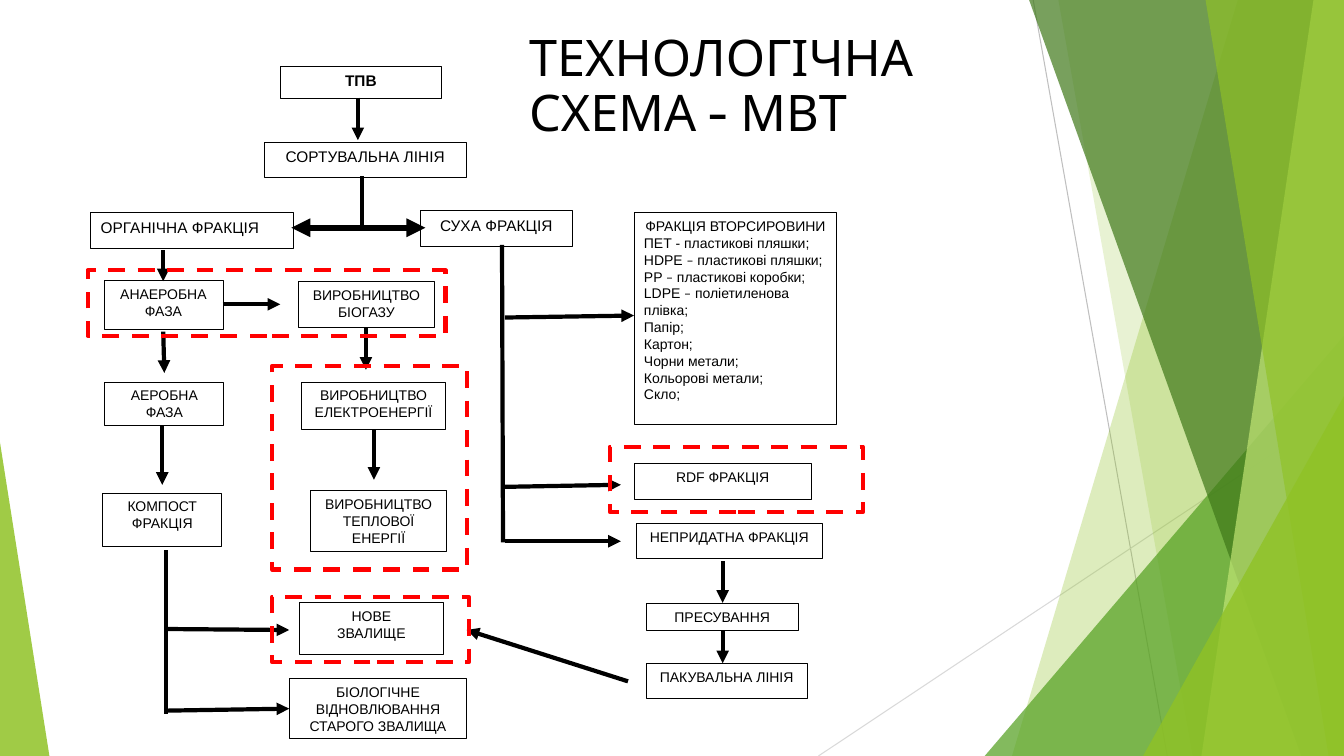
from pptx import Presentation
from pptx.dml.color import RGBColor
from pptx.enum.dml import MSO_LINE
from pptx.enum.shapes import MSO_CONNECTOR, MSO_SHAPE
from pptx.enum.text import MSO_ANCHOR, PP_ALIGN
from pptx.oxml.ns import qn
from pptx.util import Pt
from lxml.etree import SubElement

WIDTH, HEIGHT = 960, 540
BLACK, WHITE, RED, GREEN = "000000", "FFFFFF", "FF0000", "90C226"
ROW = 25.2
CENTER, LEFT = PP_ALIGN.CENTER, PP_ALIGN.LEFT

# Left, top, width, height, size, paragraphs
STEPS = [
    (188.6, 101.5, 144.7, ROW, 11, ["СОРТУВАЛЬНА ЛІНІЯ"]),
    (300.2, 150.5, 108.7, ROW, 11, ["СУХА ФРАКЦІЯ"]),
    (452.9, 331.2, 126.7, ROW, 10, ["RDF ФРАКЦІЯ"]),
    (454.3, 373.7, 133.2, ROW, 10, ["НЕПРИДАТНА ФРАКЦІЯ"]),
    (461.5, 431.3, 108.7, 18.7, 10, ["ПРЕСУВАННЯ"]),
    (461.5, 473.8, 115.2, ROW, 10, ["ПАКУВАЛЬНА ЛІНІЯ"]),
    (74.2, 200.2, 85, 35.3, 10, ["АНАЕРОБНА ФАЗА"]),
    (74.9, 272.9, 85, 31, 10, ["АЕРОБНА ФАЗА"]),
    (73.4, 352.1, 85, 38.2, 10, ["КОМПОСТ", "ФРАКЦІЯ"]),
    (213.1, 200.9, 97.2, 33.1, 10, ["ВИРОБНИЦТВО БІОГАЗУ"]),
    (215.3, 272.9, 103, 33.8, 10, ["ВИРОБНИЦТВО ЕЛЕКТРОЕНЕРГІЇ"]),
    (221.8, 350.6, 97.2, 43.2, 10, ["ВИРОБНИЦТВО ТЕПЛОВОЇ ЕНЕРГІЇ"]),
    (213.8, 430.6, 103, 36.7, 10, ["НОВЕ", "ЗВАЛИЩЕ"]),
    (206.6, 484.6, 126.7, 43.2, 10, ["БІОЛОГІЧНЕ ВІДНОВЛЮВАННЯ СТАРОГО ЗВАЛИЩА"]),
]
RECYCLABLES = [
    "ФРАКЦІЯ ВТОРСИРОВИНИ",
    "ПЕТ - пластикові пляшки;",
    "HDPE – пластикові пляшки;",
    "PP – пластикові коробки;",
    "LDPE – поліетиленова плівка;",
    "Папір;",
    "Картон;",
    "Чорни метали;",
    "Кольорові метали;",
    "Скло;",
]
ARROWS = [
    (255.6, 69.8, 255.6, 100.1),
    (115.9, 303.8, 115.9, 346.3),
    (261.4, 234, 261.4, 264.2),
    (360.7, 226.8, 452.9, 225.4),
    (360.7, 386.6, 443.5, 386.6),
    (358.6, 347.8, 443.5, 346.3),
    (516.2, 401, 516.2, 430.6),
    (516.2, 450, 516.2, 473.8),
    (159.1, 217.4, 200.2, 217.4),
    (448.6, 486.7, 333.4, 450),
    (267.1, 306.7, 267.1, 342.7),
    (116.6, 178.6, 116.6, 200.9),
    (116.6, 236.9, 117.4, 266.4),
    (118.8, 507.6, 206.6, 506.2),
    (118.8, 449.3, 206.6, 450),
]
TRUNKS = [
    (258.5, 126, 258.5, 162),
    (358.6, 175, 359.3, 387.4),
    (118.8, 393.1, 118.8, 509.8),
]
FRAMES = [
    (435.6, 319, 180.7, 46.8),
    (62.6, 193, 255.6, 46.8),
    (194.4, 261.4, 139, 145.4),
    (194.4, 426.2, 140.4, 46.8),
]


def rgb(color):
    return RGBColor.from_string(color)


def fill_translucent(shape, color, opacity):
    """Fill without outline; opacity is in percent."""
    shape.shadow.inherit = False
    shape.line.fill.background()
    shape.fill.solid()
    shape.fill.fore_color.rgb = rgb(color)
    color_element = shape._element.spPr.find(".//" + qn("a:srgbClr"))
    SubElement(color_element, qn("a:alpha"), val=str(opacity * 1000))


def add_band(slide, top_x, bottom_x, color, opacity):
    """Fill from a slanted left edge to the right side of the slide."""
    builder = slide.shapes.build_freeform(Pt(top_x), 0)
    corners = [(WIDTH, 0), (WIDTH, HEIGHT), (bottom_x, HEIGHT)]
    builder.add_line_segments([(Pt(x), Pt(y)) for x, y in corners])
    fill_translucent(builder.convert_to_shape(), color, opacity)


def add_corner(slide, left, top, width, apex, color, opacity):
    """Triangle on the bottom edge; apex is 0 for left and 1 for right."""
    shape = slide.shapes.add_shape(
        MSO_SHAPE.ISOSCELES_TRIANGLE, Pt(left), Pt(top), Pt(width), Pt(HEIGHT - top))
    shape.adjustments[0] = apex
    fill_translucent(shape, color, opacity)


def add_line(slide, points, color=BLACK, width=3, ends=()):
    connector = slide.shapes.add_connector(
        MSO_CONNECTOR.STRAIGHT, *[Pt(value) for value in points])
    connector.line.color.rgb = rgb(color)
    connector.line.width = Pt(width)
    for end in ends:
        SubElement(connector.line._get_or_add_ln(), qn("a:" + end), type="triangle")
    SubElement(connector._element.spPr, qn("a:effectLst"))


def add_run(paragraph, text, size, font, bold=False):
    run = paragraph.add_run()
    run.text = text
    run.font.size = Pt(size)
    run.font.name = font
    run.font.bold = bold
    run.font.color.rgb = rgb(BLACK)


def add_rectangle(slide, bounds, color, width):
    shape = slide.shapes.add_shape(
        MSO_SHAPE.RECTANGLE, *[Pt(value) for value in bounds])
    shape.shadow.inherit = False
    shape.line.color.rgb = rgb(color)
    shape.line.width = Pt(width)
    return shape


def add_step(slide, left, top, width, height, size, texts,
             first_align=CENTER, next_align=CENTER, bold=False):
    shape = add_rectangle(slide, (left, top, width, height), BLACK, 0.5)
    shape.fill.solid()
    shape.fill.fore_color.rgb = rgb(WHITE)
    frame = shape.text_frame
    frame.word_wrap = True
    frame.vertical_anchor = MSO_ANCHOR.TOP
    for index, text in enumerate(texts):
        paragraph = frame.add_paragraph() if index else frame.paragraphs[0]
        paragraph.alignment = next_align if index else first_align
        for part in filter(None, text.partition("–")):
            add_run(paragraph, part, size, "Calibri" if part == "–" else "Arial", bold)


def add_frame(slide, bounds):
    shape = add_rectangle(slide, bounds, RED, 3)
    shape.fill.background()
    shape.line.dash_style = MSO_LINE.DASH


def add_title(slide, text):
    box = slide.shapes.add_textbox(Pt(370.8), Pt(10.8), Pt(359.3), Pt(103.7))
    frame = box.text_frame
    frame.word_wrap = True
    frame.vertical_anchor = MSO_ANCHOR.MIDDLE
    frame.paragraphs[0].line_spacing = 0.9
    add_run(frame.paragraphs[0], text, 36, "Cabin")


def add_backdrop(slide):
    add_line(slide, (738, 0, 833.8, HEIGHT), "BFBFBF", 0.75)
    add_line(slide, (WIDTH, 290.2, 584.6, HEIGHT), "D9D9D9", 0.75)
    add_band(slide, 884.2, 722.9, GREEN, 30)
    add_band(slide, 756, 851.8, GREEN, 20)
    add_corner(slide, 703.4, 239.8, 256.6, 1, "54A021", 72)
    add_band(slide, 735.1, 929.5, "3F7819", 70)
    add_band(slide, 938.2, 858.2, "C0E474", 70)
    add_band(slide, 861.1, 949, GREEN, 65)
    add_corner(slide, 816.5, 283, 143.5, 1, GREEN, 80)
    add_corner(slide, 0, 316.1, 35.3, 0, GREEN, 85)


def main():
    presentation = Presentation()
    presentation.slide_width, presentation.slide_height = Pt(WIDTH), Pt(HEIGHT)
    slide = presentation.slides.add_slide(presentation.slide_layouts[6])
    add_backdrop(slide)
    add_title(slide, "ТЕХНОЛОГІЧНА СХЕМА - МВТ")
    add_step(slide, 200.2, 47.5, 115.2, 23, 11, ["ТПВ"], bold=True)
    add_step(slide, 64.8, 151.9, 144.7, ROW, 11, ["ОРГАНІЧНА ФРАКЦІЯ"], first_align=LEFT)
    add_step(slide, 452.9, 151.9, 144.7, 151.2, 10, RECYCLABLES, next_align=LEFT)
    for step in STEPS:
        add_step(slide, *step)
    for trunk in TRUNKS:
        add_line(slide, trunk)
    add_line(slide, (208.1, 162.7, 303.8, 162.7), width=4.5, ends=("headEnd", "tailEnd"))
    for arrow in ARROWS:
        add_line(slide, arrow, ends=("tailEnd",))
    for bounds in FRAMES:
        add_frame(slide, bounds)
    presentation.save("out.pptx")


if __name__ == "__main__":
    main()
